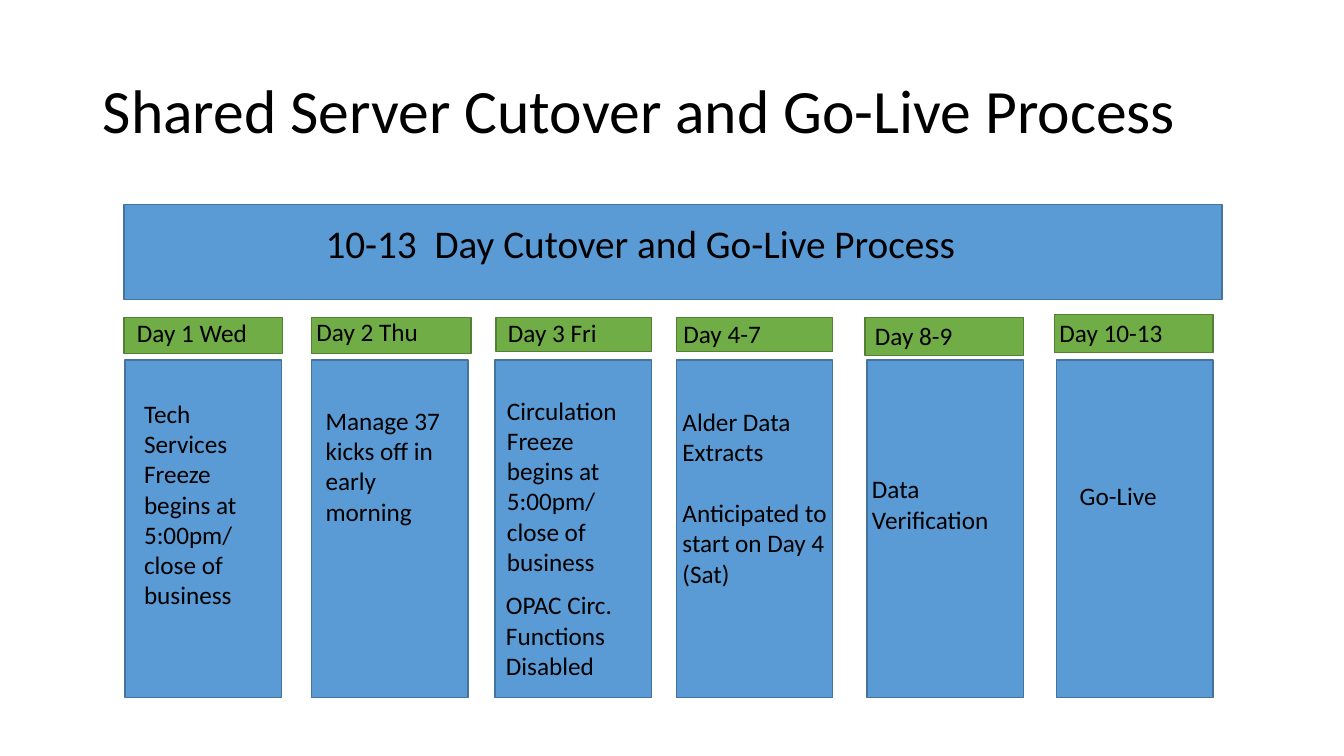
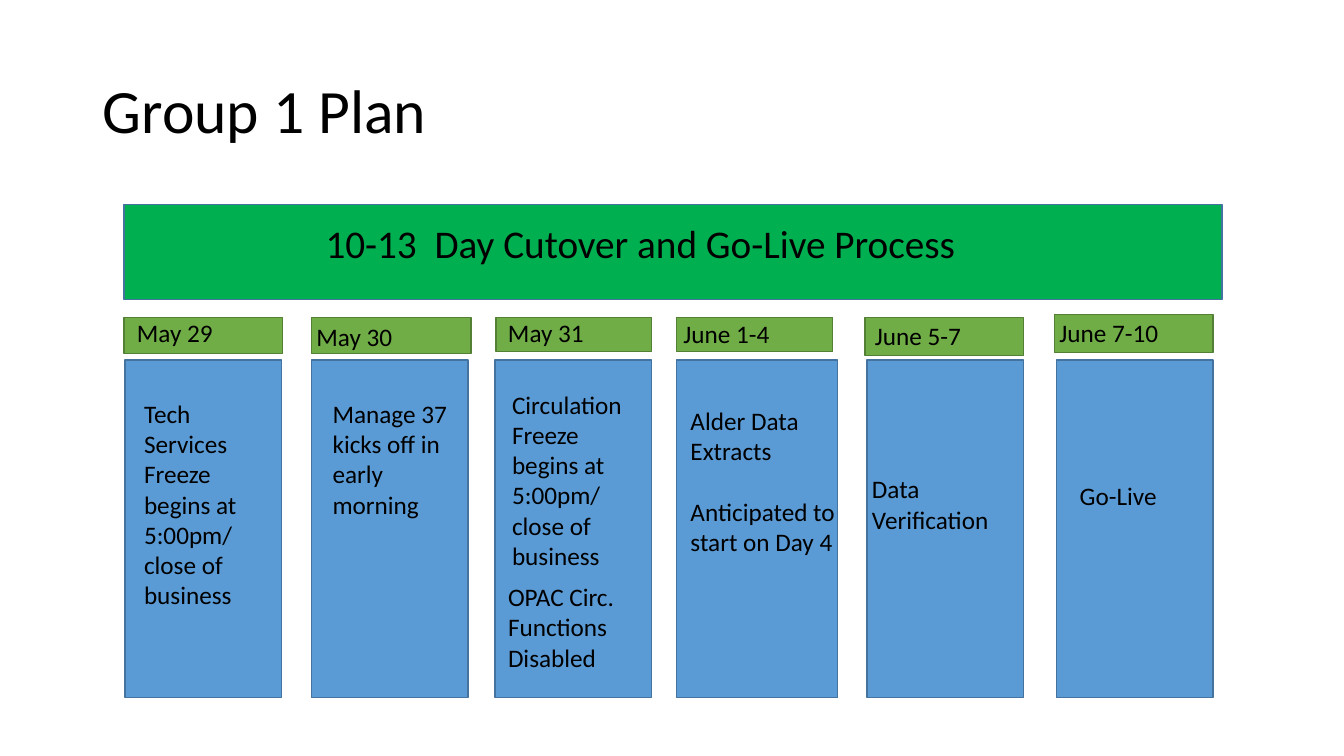
from dataclasses import dataclass

from pptx import Presentation
from pptx.dml.color import RGBColor
from pptx.enum.shapes import MSO_SHAPE
from pptx.enum.text import MSO_ANCHOR, MSO_AUTO_SIZE, PP_ALIGN
from pptx.util import Pt

RECTANGLE = MSO_SHAPE.RECTANGLE
MIDDLE = MSO_ANCHOR.MIDDLE
LEFT = PP_ALIGN.LEFT
NO_FIT = MSO_AUTO_SIZE.NONE
GROW = MSO_AUTO_SIZE.SHAPE_TO_FIT_TEXT
PX = 9144


@dataclass(frozen=True)
class Theme:
    font: str = "Calibri"
    ink: RGBColor = RGBColor(0x00, 0x00, 0x00)
    blue: RGBColor = RGBColor(0x5B, 0x9B, 0xD5)
    blue_edge: RGBColor = RGBColor(0x43, 0x73, 0x9E)
    green: RGBColor = RGBColor(0x70, 0xAD, 0x47)
    green_edge: RGBColor = RGBColor(0x53, 0x80, 0x35)
    bright_green: RGBColor = RGBColor(0x00, 0xB0, 0x50)
    title_size: int = 44
    banner_size: int = 28
    body_size: int = 18


THEME = Theme()


def add_box(slide, area, fill, edge):
    box = slide.shapes.add_shape(RECTANGLE, *(n * PX for n in area))
    box.shadow.inherit = False
    box.fill.solid()
    box.fill.fore_color.rgb = fill
    box.line.color.rgb = edge
    box.line.width = Pt(1)


def write(frame, paragraphs, size, gap=0):
    frame.word_wrap = True
    for index, words in enumerate(paragraphs):
        paragraph = frame.add_paragraph() if index else frame.paragraphs[0]
        paragraph.alignment = LEFT
        if index and gap:
            paragraph.space_before = Pt(gap)
        run = paragraph.add_run()
        run.text = words
        run.font.name = THEME.font
        run.font.size = Pt(size)
        run.font.color.rgb = THEME.ink


CARD_TOP, CARD_WIDTH, CARD_HEIGHT = 357, 155, 335
EXTRACT_COLUMN = 3
BLANK_LINE = 22
CARD_LEFTS = [124, 309, 491, 671, 860, 1048]
TAG_AREAS = [
    (123, 315, 157, 36),
    (309, 315, 158, 36),
    (492, 315, 154, 34),
    (671, 315, 155, 34),
    (858, 315, 157, 38),
    (1046, 312, 157, 38),
]
DAY_AREAS = [
    (126, 310, 145, 40),
    (304, 309, 153, 40),
    (494, 310, 147, 40),
    (668, 311, 147, 40),
    (858, 313, 150, 40),
    (1041, 310, 150, 40),
]
SHARED_STEPS = [
    ((133, 390, 125, 252),
     ["Tech Services Freeze begins at 5:00pm/ close of business"], 0),
    ((855, 465, 152, 71), ["Data Verification"], 0),
    ((1061, 472, 110, 40), ["Go-Live"], 0),
]
PLANS = [
    {
        "title": "Shared Server Cutover and Go-Live Process",
        "banner": THEME.blue,
        "extract_width": CARD_WIDTH,
        "second_day_drop": 0,
        "days": ["Day 1 Wed", "Day 2 Thu", "Day 3 Fri",
                 "Day 4-7", "Day 8-9", "Day 10-13"],
        "steps": [
            ((313, 397, 149, 162),
             ["Manage 37", "kicks off in early", "morning"], 0),
            ((493, 387, 148, 192),
             ["Circulation Freeze begins at 5:00pm/ close of business"], 0),
            ((492, 580, 191, 101), ["OPAC Circ. Functions Disabled"], 0),
            ((667, 398, 191, 192),
             ["Alder Data Extracts",
              "Anticipated to start on Day 4 (Sat)"], BLANK_LINE),
        ],
    },
    {
        "title": "Group 1 Plan",
        "banner": THEME.bright_green,
        "extract_width": 160,
        "second_day_drop": 5,
        "days": ["May 29", "May 30", "May 31",
                 "June 1-4", "June 5-7", "June 7-10"],
        "steps": [
            ((320, 390, 142, 131),
             ["Manage 37 kicks off in early morning"], 0),
            ((498, 381, 139, 192),
             ["Circulation Freeze begins at 5:00pm/", "close of business"], 0),
            ((494, 572, 191, 101), ["OPAC Circ. Functions Disabled"], 0),
            ((675, 397, 191, 162),
             ["Alder Data Extracts",
              "Anticipated to start on Day 4"], BLANK_LINE),
        ],
    },
]

deck = Presentation()
deck.slide_width = 1333 * PX
deck.slide_height = 750 * PX
title_only = deck.slide_layouts[5]

for plan in PLANS:
    slide = deck.slides.add_slide(title_only)
    heading = slide.shapes.title
    heading.left, heading.top = 92 * PX, 40 * PX
    heading.width, heading.height = 1150 * PX, 145 * PX
    heading.text_frame.auto_size = NO_FIT
    heading.text_frame.vertical_anchor = MIDDLE
    write(heading.text_frame, [plan["title"]], THEME.title_size)
    heading.text_frame.paragraphs[0].line_spacing = 0.9

    add_box(slide, (123, 203, 1089, 94), plan["banner"], THEME.blue_edge)
    for column, left in enumerate(CARD_LEFTS):
        width = plan["extract_width"] if column == EXTRACT_COLUMN else CARD_WIDTH
        add_box(slide, (left, CARD_TOP, width, CARD_HEIGHT),
                THEME.blue, THEME.blue_edge)
        add_box(slide, TAG_AREAS[column], THEME.green, THEME.green_edge)

    captions = [((313, 213, 709, 57),
                 ["10-13  Day Cutover and Go-Live Process"],
                 0, THEME.banner_size)]
    for column, (area, day) in enumerate(zip(DAY_AREAS, plan["days"])):
        left, top, width, height = area
        drop = plan["second_day_drop"] if column == 1 else 0
        captions.append(((left, top + drop, width, height),
                         [day], 0, THEME.body_size))
    for step in SHARED_STEPS + plan["steps"]:
        captions.append((*step, THEME.body_size))

    for area, paragraphs, gap, size in captions:
        caption = slide.shapes.add_textbox(*(n * PX for n in area))
        caption.text_frame.auto_size = GROW
        write(caption.text_frame, paragraphs, size, gap)

deck.save("out.pptx")
